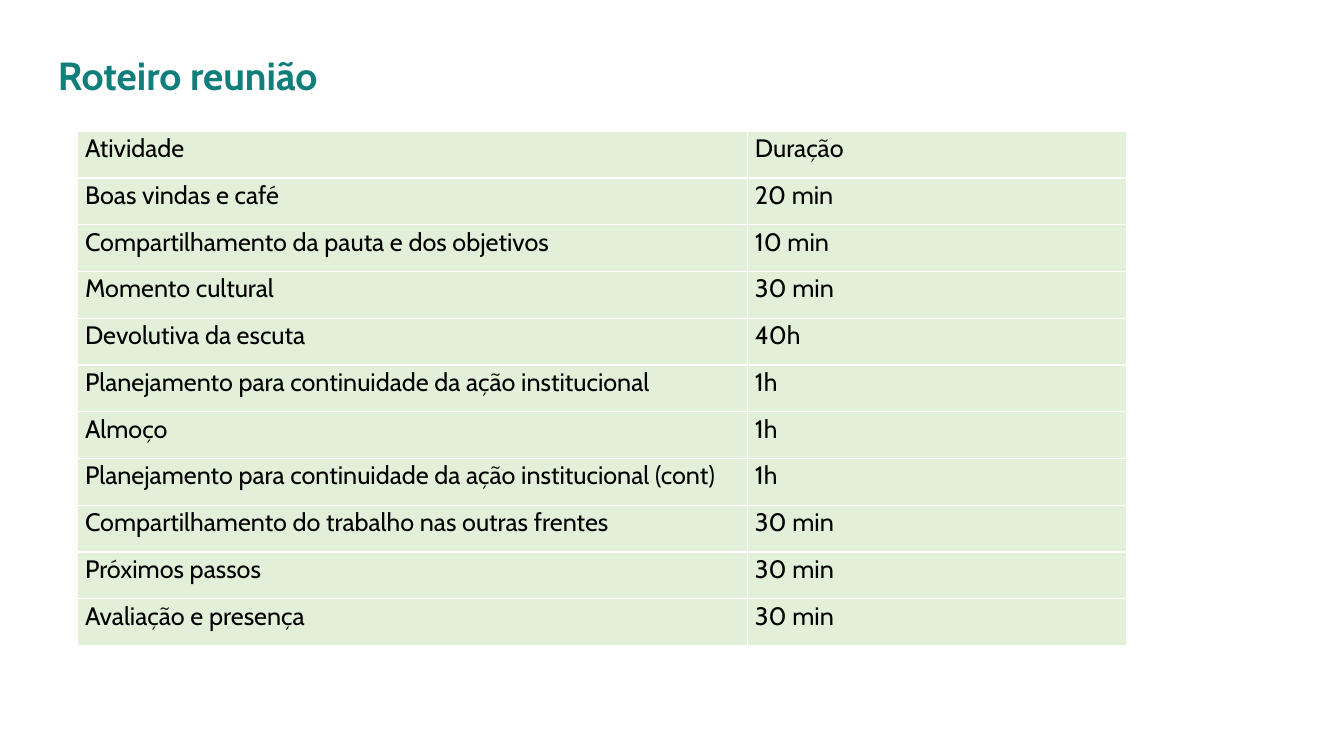
import dataclasses

import pptx
import pptx.dml.color
import pptx.enum.text
import pptx.oxml
import pptx.oxml.ns
import pptx.util

EMU_PER_PX = 9525


@dataclasses.dataclass(frozen=True)
class Theme:
    font: str = "Cabin"
    title_color: str = "107F7B"
    text_color: str = "000000"
    cell_fill: str = "E2F0D9"
    border_color: str = "FFFFFF"
    title_size: int = 28
    table_size: int = 18
    border_width: int = 1


THEME = Theme()

AGENDA = [
    ("Atividade", "Duração"),
    ("Boas vindas e café", "20 min"),
    ("Compartilhamento da pauta e dos objetivos", "10 min"),
    ("Momento cultural", "30 min"),
    ("Devolutiva da escuta", "40h"),
    ("Planejamento para continuidade da ação institucional", "1h"),
    ("Almoço", "1h"),
    ("Planejamento para continuidade da ação institucional (cont)", "1h"),
    ("Compartilhamento do trabalho nas outras frentes", "30 min"),
    ("Próximos passos", "30 min"),
    ("Avaliação e presença", "30 min"),
]


def px(length):
    return pptx.util.Emu(round(length * EMU_PER_PX))


def rgb(color):
    return pptx.dml.color.RGBColor.from_string(color)


def write_text(frame, text, *, size, color, bold=False, line_spacing=1.0, space_after=0):
    para = frame.paragraphs[0]
    para.alignment = pptx.enum.text.PP_ALIGN.LEFT
    para.line_spacing = line_spacing
    para.space_before = pptx.util.Pt(0)
    para.space_after = pptx.util.Pt(space_after)
    span = para.add_run()
    span.text = text
    span.font.name = THEME.font
    span.font.size = pptx.util.Pt(size)
    span.font.bold = bold
    span.font.color.rgb = rgb(color)


def add_title(page, text, left, top, width, height):
    box = page.shapes.title
    box.left, box.top, box.width, box.height = map(px, (left, top, width, height))
    frame = box.text_frame
    frame.word_wrap = True
    frame.auto_size = pptx.enum.text.MSO_AUTO_SIZE.NONE
    frame.vertical_anchor = pptx.enum.text.MSO_ANCHOR.MIDDLE
    frame.margin_left = frame.margin_right = px(12)
    frame.margin_top = frame.margin_bottom = px(12)
    write_text(frame, text, size=THEME.title_size, color=THEME.title_color, bold=True)


def set_borders(cell):
    properties = cell._tc.get_or_add_tcPr()
    for side in ("lnL", "lnR", "lnT", "lnB"):
        properties.append(pptx.oxml.parse_xml(
            f'<a:{side} {pptx.oxml.ns.nsdecls("a")} w="{pptx.util.Pt(THEME.border_width)}">'
            f'<a:solidFill><a:srgbClr val="{THEME.border_color}"/></a:solidFill></a:{side}>'
        ))


def fill_cell(cell, text):
    cell.margin_left = cell.margin_right = px(7)
    cell.margin_top = cell.margin_bottom = 0
    set_borders(cell)
    cell.fill.solid()
    cell.fill.fore_color.rgb = rgb(THEME.cell_fill)
    write_text(cell.text_frame, text, size=THEME.table_size, color=THEME.text_color,
               line_spacing=1.07, space_after=8)


def add_agenda_table(page, rows, left, top, column_widths, height):
    frame = page.shapes.add_table(len(rows), len(column_widths), px(left), px(top),
                                  px(sum(column_widths)), px(height))
    table = frame.table
    table.first_row = False
    table.horz_banding = False
    for column, width in zip(table.columns, column_widths):
        column.width = px(width)
    for row, texts in zip(table.rows, rows):
        row.height = px(height / len(rows))
        for cell, text in zip(row.cells, texts):
            fill_cell(cell, text)


def main():
    deck = pptx.Presentation()
    deck.slide_width, deck.slide_height = px(1280), px(720)
    title_only = deck.slide_layouts[5]
    page = deck.slides.add_slide(title_only)

    # Heading
    add_title(page, "Roteiro reunião", 43, 32, 1154, 78)

    # Meeting agenda
    add_agenda_table(page, AGENDA, 74, 125, (638, 361), 490)

    deck.save("out.pptx")


if __name__ == "__main__":
    main()
